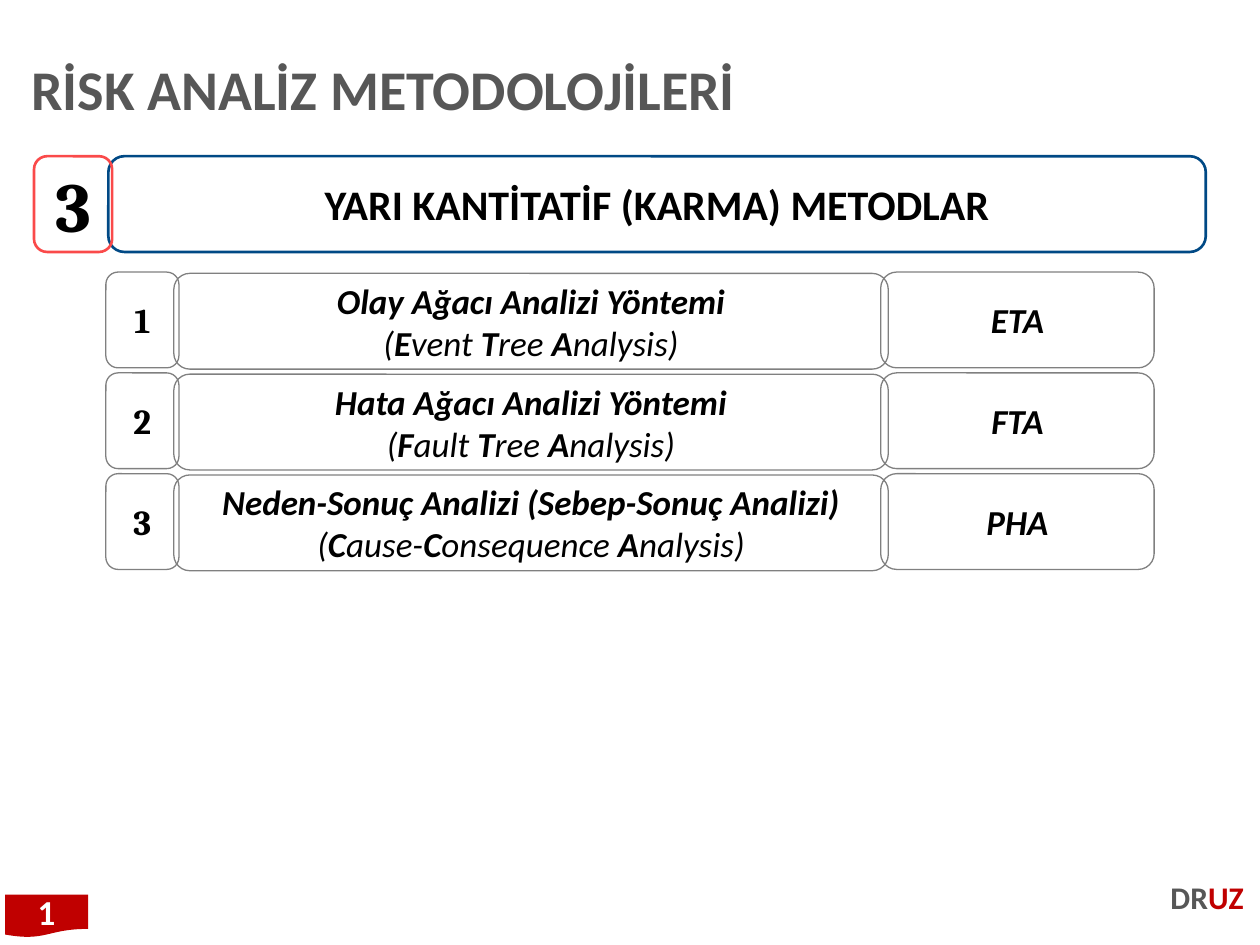
from itertools import groupby

from pptx import Presentation
from pptx.dml.color import RGBColor
from pptx.enum.shapes import MSO_SHAPE as Shape
from pptx.enum.text import MSO_ANCHOR as Anchor, PP_ALIGN as Align
from pptx.util import Inches, Pt

BLACK = RGBColor(0x00, 0x00, 0x00)
WHITE = RGBColor(0xFF, 0xFF, 0xFF)
SLATE = RGBColor(0x57, 0x57, 0x57)
GRAY = RGBColor(0x80, 0x80, 0x80)
BLUE = RGBColor(0x00, 0x49, 0x85)
CORAL = RGBColor(0xFA, 0x4A, 0x4A)
RED = RGBColor(0xC0, 0x00, 0x00)

ROW_HEIGHT = 0.76
ROW_PITCH = 0.8
METHODS = [
    ("Olay Ağacı Analizi Yöntemi", "(Event Tree Analysis)", "ETA"),
    ("Hata Ağacı Analizi Yöntemi", "(Fault Tree Analysis)", "FTA"),
    ("Neden-Sonuç Analizi (Sebep-Sonuç Analizi)",
     "(Cause-Consequence Analysis)", "PHA"),
]


def style(para, size, color=BLACK, name="Calibri", italic=False, bold=True):
    font = para.font
    font.size, font.name, font.bold, font.italic = Pt(size), name, bold, italic
    font.color.rgb = color


def add_frame(page, left, top, width, line, weight):
    """Rounded outline holding one centred paragraph, which is returned."""
    box = page.shapes.add_shape(Shape.ROUNDED_RECTANGLE, Inches(left), Inches(top),
                                Inches(width), Inches(ROW_HEIGHT))
    box.shadow.inherit = False
    box.fill.background()
    box.line.color.rgb = line
    box.line.width = Pt(weight)
    frame = box.text_frame
    frame.word_wrap = False
    frame.vertical_anchor = Anchor.MIDDLE
    frame.paragraphs[0].alignment = Align.CENTER
    return frame


def add_label(page, left, top, width, text, size, line=GRAY, weight=0.75, **font):
    para = add_frame(page, left, top, width, line, weight).paragraphs[0]
    para.text = text
    style(para, size, **font)


def add_title(page, left, top, width, height):
    box = page.shapes.add_textbox(Inches(left), Inches(top), Inches(width), Inches(height))
    frame = box.text_frame
    frame.word_wrap = True
    frame.vertical_anchor = Anchor.MIDDLE
    frame.margin_left = frame.margin_right = 0
    para = frame.paragraphs[0]
    para.text = "RİSK ANALİZ METODOLOJİLERİ"
    para.line_spacing = 0.9
    style(para, 32, SLATE)


def add_heading(page, left, top):
    add_label(page, left + 0.59, top, 8.71, "YARI KANTİTATİF (KARMA) METODLAR", 24,
              BLUE, 1.5)
    add_label(page, left, top, 0.62, "3", 40, CORAL, 1.5, name="Cambria")


def add_method(page, left, top, number, turkish, english, code):
    # Turkish name above the English one, whose initials are bold
    frame = add_frame(page, left + 0.54, top + 0.01, 5.67, GRAY, 0.75)
    name = frame.paragraphs[0]
    name.text = turkish
    style(name, 20, italic=True)
    translation = frame.add_paragraph()
    translation.alignment = Align.CENTER
    style(translation, 20, italic=True, bold=False)
    for capital, letters in groupby(english, str.isupper):
        span = translation.add_run()
        span.text = "".join(letters)
        span.font.bold = capital
    # Number and abbreviation on either side
    add_label(page, left, top, 0.58, str(number), 20, name="Cambria")
    add_label(page, left + 6.15, top, 2.17, code, 20, italic=True)


def add_footer(page):
    # Signature
    box = page.shapes.add_textbox(Inches(9.2), Inches(6.97), Inches(0.67), Inches(0.56))
    frame = box.text_frame
    frame.word_wrap = True
    frame.margin_left = frame.margin_right = frame.margin_top = frame.margin_bottom = 0
    para = frame.paragraphs[0]
    para.alignment = Align.RIGHT
    style(para, 18, SLATE)
    para.add_run().text = "DR"
    span = para.add_run()
    span.text = "UZ"
    span.font.color.rgb = RED

    # Page number flag
    flag = page.shapes.add_shape(Shape.FLOWCHART_DOCUMENT, Inches(0.04), Inches(7.1),
                                 Inches(0.66), Inches(0.34))
    flag.shadow.inherit = False
    flag.fill.solid()
    flag.fill.fore_color.rgb = RED
    flag.line.fill.background()
    flag.text_frame.vertical_anchor = Anchor.MIDDLE
    number = flag.text_frame.paragraphs[0]
    number.text = "1"
    number.alignment = Align.CENTER
    style(number, 20, WHITE)


def main():
    deck = Presentation()
    deck.slide_width, deck.slide_height = Inches(10), Inches(7.5)
    page = deck.slides.add_slide(deck.slide_layouts[6])
    add_title(page, 0.25, 0.38, 9.64, 0.71)
    add_heading(page, 0.27, 1.24)
    for index, method in enumerate(METHODS):
        add_method(page, 0.84, 2.16 + index * ROW_PITCH, index + 1, *method)
    add_footer(page)
    deck.save("out.pptx")


if __name__ == "__main__":
    main()
